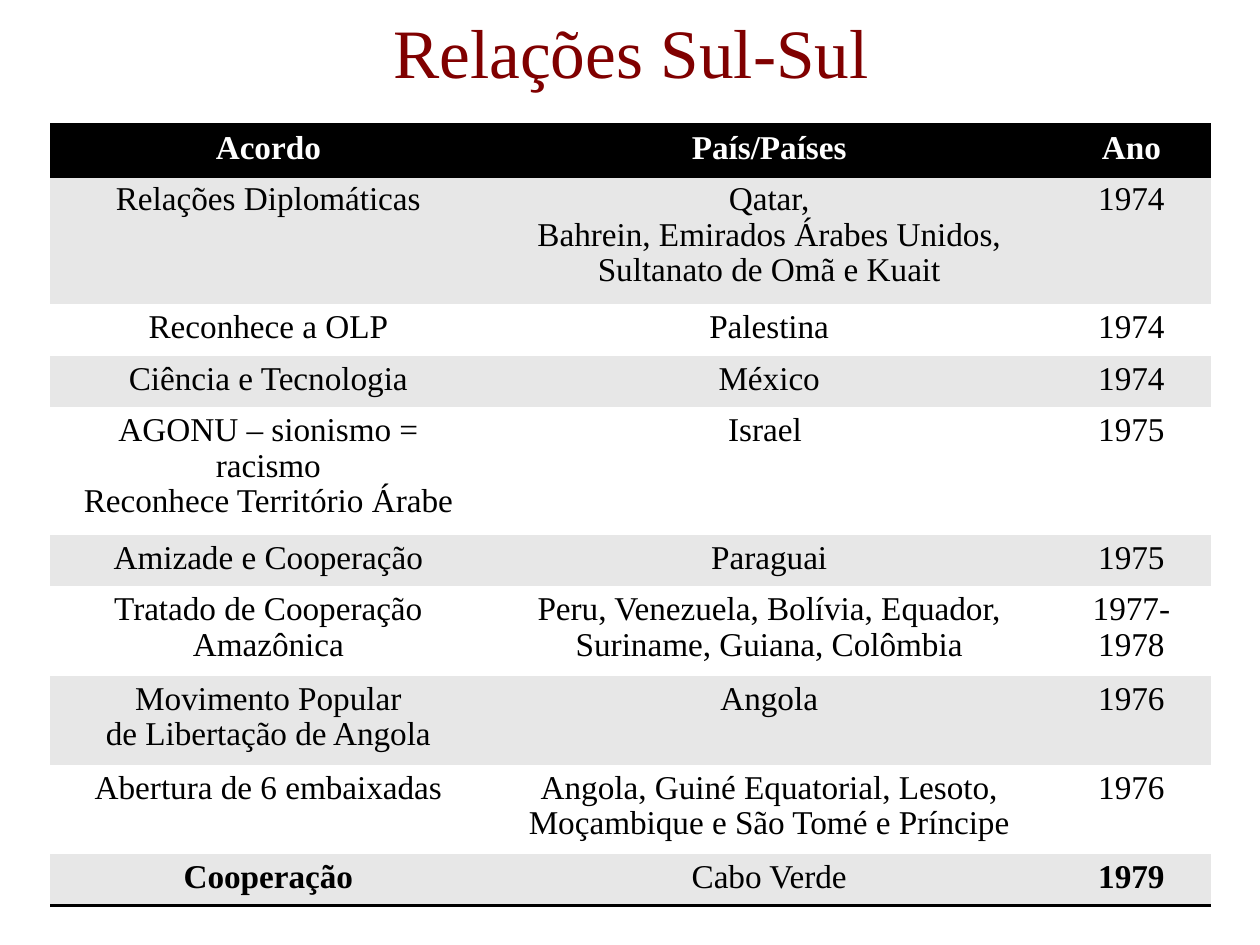
from lxml import etree
from pptx import Presentation
from pptx.dml.color import RGBColor
from pptx.enum.text import MSO_ANCHOR, PP_ALIGN
from pptx.oxml.ns import qn
from pptx.util import Inches, Pt

CENTER = PP_ALIGN.CENTER
MIDDLE = MSO_ANCHOR.MIDDLE
FONT = "Times New Roman"
NO_STYLE = "{2D5ABB26-0587-4C30-8999-92F81FD0307C}"
COLORS = {"title": "800000", "black": "000000", "white": "FFFFFF", "band": "E7E7E7"}

COLUMN_WIDTHS = [3.46, 4.49, 1.26]
ROW_HEIGHT = 0.41
AGREEMENTS = [
    ("Acordo", "País/Países", "Ano"),
    ("Relações Diplomáticas",
     "Qatar,\nBahrein, Emirados Árabes Unidos, Sultanato de Omã e Kuait", "1974"),
    ("Reconhece a OLP", "Palestina", "1974"),
    ("Ciência e Tecnologia", "México", "1974"),
    ("AGONU – sionismo = racismo\nReconhece Território Árabe", "Israel ", "1975"),
    ("Amizade e Cooperação", "Paraguai", "1975"),
    ("Tratado de Cooperação Amazônica",
     "Peru, Venezuela, Bolívia, Equador, Suriname, Guiana, Colômbia", "1977-1978"),
    ("Movimento Popular\nde Libertação de Angola", "Angola", "1976"),
    ("Abertura de 6 embaixadas",
     "Angola, Guiné Equatorial, Lesoto, Moçambique e São Tomé e Príncipe", "1976"),
    ("Cooperação", "Cabo Verde", "1979"),
]
LAST_ROW = len(AGREEMENTS) - 1


def format_text(text_frame, size, color, bold=False):
    for paragraph in text_frame.paragraphs:
        paragraph.alignment = CENTER
        for run in paragraph.runs:
            run.font.name = FONT
            run.font.size = Pt(size)
            run.font.bold = bold
            run.font.color.rgb = RGBColor.from_string(COLORS[color])


def add_borders(cell, sides):
    properties = cell._tc.get_or_add_tcPr()
    for position, side in enumerate(sides):
        line = etree.Element(qn(f"a:ln{side}"), w=str(Pt(2)))
        fill = etree.SubElement(line, qn("a:solidFill"))
        etree.SubElement(fill, qn("a:srgbClr"), val=COLORS["black"])
        properties.insert(position, line)  # borders come before the fill


prs = Presentation()
prs.slide_width, prs.slide_height = Inches(10), Inches(7.5)
slide = prs.slides.add_slide(prs.slide_layouts[6])

# Title
title = slide.shapes.add_textbox(Inches(0.51), Inches(0.13), Inches(9), Inches(0.55)).text_frame
title.word_wrap = True
title.margin_top = title.margin_bottom = 0
title.vertical_anchor = MIDDLE
title.text = "Relações Sul-Sul"
format_text(title, 39.6, "title")

# Table of agreements
agreements = slide.shapes.add_table(
    len(AGREEMENTS), len(COLUMN_WIDTHS), Inches(0.4), Inches(0.99),
    Inches(sum(COLUMN_WIDTHS)), Inches(ROW_HEIGHT * len(AGREEMENTS))).table
agreements._tbl.tblPr.find(qn("a:tableStyleId")).text = NO_STYLE
for column, width in zip(agreements.columns, COLUMN_WIDTHS):
    column.width = Inches(width)

for r, agreement in enumerate(AGREEMENTS):
    agreements.rows[r].height = Inches(ROW_HEIGHT)
    header = r == 0
    background = "black" if header else "band" if r % 2 else "white"
    for c, wording in enumerate(agreement):
        cell = agreements.cell(r, c)
        cell.fill.solid()
        cell.fill.fore_color.rgb = RGBColor.from_string(COLORS[background])
        cell.text_frame.text = wording
        bold = header or (r == LAST_ROW and c != 1)
        format_text(cell.text_frame, 19, "white" if header else "black", bold)
        for paragraph in cell.text_frame.paragraphs:
            paragraph.line_spacing = 0.96
        if header:
            add_borders(cell, "TB")
        elif r == LAST_ROW:
            add_borders(cell, "B")

prs.save("out.pptx")
